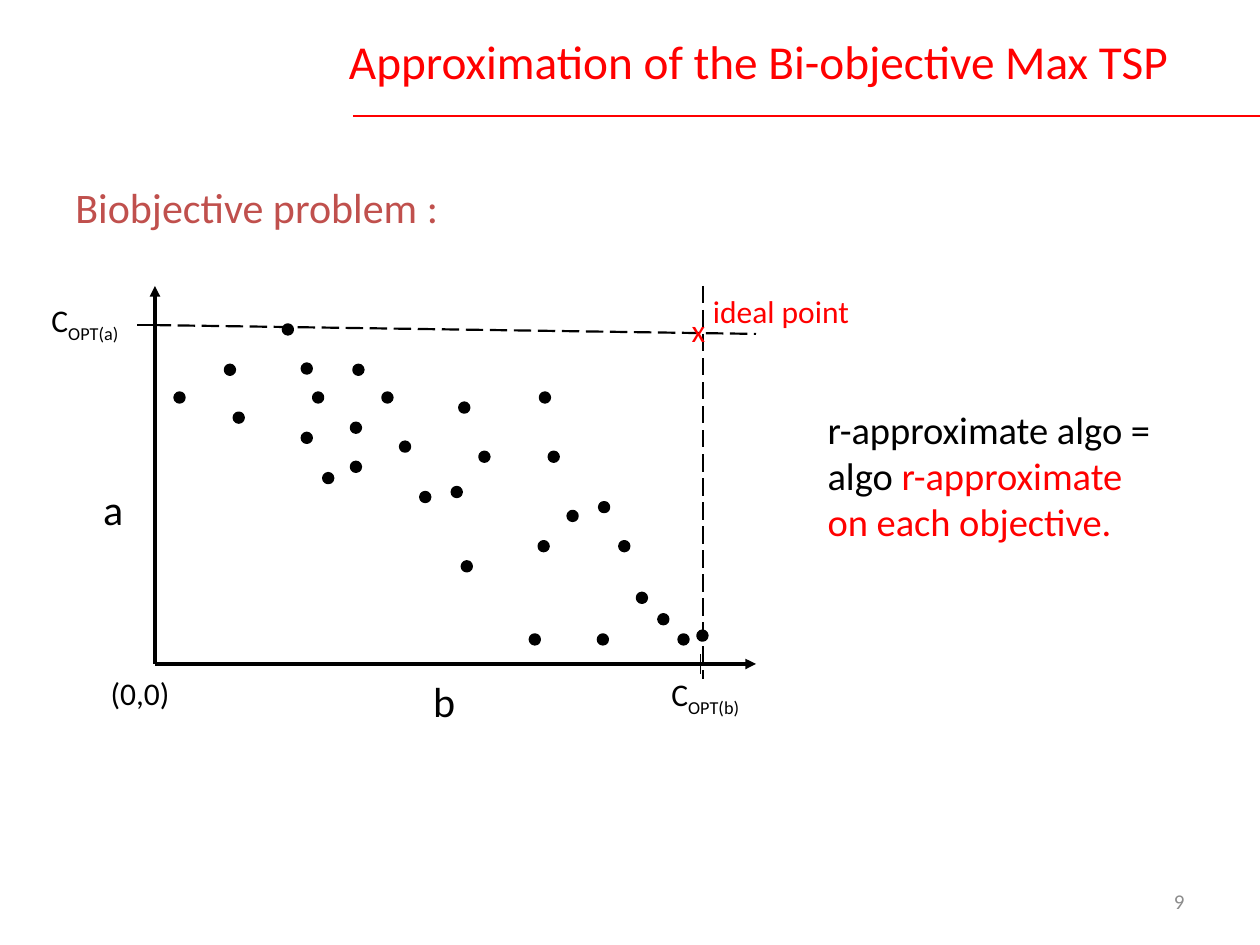
from lxml.etree import SubElement
from pptx import Presentation
from pptx.dml.color import RGBColor
from pptx.enum.dml import MSO_LINE
from pptx.enum.shapes import MSO_CONNECTOR, MSO_SHAPE
from pptx.enum.text import MSO_ANCHOR, MSO_AUTO_SIZE, PP_ALIGN
from pptx.oxml.ns import qn
from pptx.util import Inches, Pt

COLORS = {"black": "000000", "red": "FF0000", "heading": "C0504D", "gray": "8C8C8C"}
FONT = "Calibri"
DOT_SIZE = 0.07
ORIGIN_X, ORIGIN_Y = 1.23, 5.27
AXIS_TOP, AXIS_RIGHT = 2.27, 6

# Left and top of each solution in the objective space
SOLUTIONS = [
    (5.06, 4.71), (4.51, 4.06), (3.59, 3.87), (4.75, 5.04), (4.28, 4.3),
    (5.54, 5.01), (4.36, 3.59), (4.21, 5.04), (4.29, 3.12), (4.92, 4.3),
    (1.79, 2.9), (3.34, 3.91), (3.18, 3.51), (3.81, 3.59), (3.65, 3.2),
    (2.49, 3.12), (2.79, 3.67), (1.86, 3.28), (2.4, 3.44), (2.4, 2.89),
    (5.23, 4.88), (1.39, 3.12), (2.79, 3.36), (5.39, 5.04), (2.57, 3.76),
    (3.04, 3.12), (4.76, 3.99), (2.25, 2.58), (2.81, 2.9), (3.67, 4.46),
]


def color(name):
    return RGBColor.from_string(COLORS[name])


class SlidePainter:
    """Holds the style and the current slide."""

    def __init__(self, page):
        self.page = page

    def text(self, left, top, width, height, paragraphs, size, tint="black",
             align=PP_ALIGN.LEFT, anchor=MSO_ANCHOR.TOP, wrap=True, grow=False):
        """Each paragraph is a list of (text, color or None, is subscript)."""
        box = self.page.shapes.add_textbox(
            Inches(left), Inches(top), Inches(width), Inches(height))
        frame = box.text_frame
        frame.word_wrap = wrap
        frame.vertical_anchor = anchor
        frame.auto_size = MSO_AUTO_SIZE.SHAPE_TO_FIT_TEXT if grow else MSO_AUTO_SIZE.NONE
        for index, spans in enumerate(paragraphs):
            para = frame.add_paragraph() if index else frame.paragraphs[0]
            para.alignment = align
            para.font.name = FONT
            para.font.size = Pt(size)
            para.font.color.rgb = color(tint)
            for words, span_tint, subscript in spans:
                span = para.add_run()
                span.text = words
                span.font.name = FONT
                span.font.size = Pt(size)
                span.font.color.rgb = color(span_tint or tint)
                if subscript:
                    span.font._element.set("baseline", "-25000")
        return box

    def label(self, left, top, width, height, words, size=18, tint="black",
              subscript="", wrap=False):
        spans = [(words, None, False)]
        if subscript:
            spans.append((subscript, None, True))
        return self.text(left, top, width, height, [spans], size, tint,
                         wrap=wrap, grow=True)

    def line(self, start, end, width, tint="black", dashed=False, arrow=False):
        """The arrowhead, if any, sits at the start."""
        connector = self.page.shapes.add_connector(
            MSO_CONNECTOR.STRAIGHT, *(Inches(value) for value in start + end))
        connector.line.color.rgb = color(tint)
        connector.line.width = Pt(width)
        if dashed:
            connector.line.dash_style = MSO_LINE.LONG_DASH
        if arrow:
            SubElement(connector.line._get_or_add_ln(), qn("a:headEnd"), type="triangle")
        SubElement(connector._element.spPr, qn("a:effectLst"))
        return connector

    def dot(self, left, top):
        shape = self.page.shapes.add_shape(
            MSO_SHAPE.FLOWCHART_CONNECTOR, Inches(left), Inches(top),
            Inches(DOT_SIZE), Inches(DOT_SIZE))
        shape.shadow.inherit = False
        shape.fill.solid()
        shape.fill.fore_color.rgb = color("black")
        shape.line.color.rgb = color("black")
        shape.line.width = Pt(2)
        return shape


def main():
    deck = Presentation()
    deck.slide_width, deck.slide_height = Inches(10), Inches(7.5)
    painter = SlidePainter(deck.slides.add_slide(deck.slide_layouts[6]))

    # Heading and page number
    painter.text(0.5, 1.39, 4.33, 5.31, [[("Biobjective problem :", None, False)]],
                 24, "heading")
    painter.text(7.17, 6.95, 2.33, 0.4, [[("9", None, False)]], 12, "gray",
                 PP_ALIGN.RIGHT, MSO_ANCHOR.MIDDLE)

    # Axes and solutions
    origin = (ORIGIN_X, ORIGIN_Y)
    painter.line((AXIS_RIGHT, ORIGIN_Y), origin, 2, arrow=True)
    painter.line((ORIGIN_X, AXIS_TOP), origin, 2, arrow=True)
    for left, top in SOLUTIONS:
        painter.dot(left, top)

    # Definition
    painter.text(6.47, 3.17, 2.87, 1.51, [
        [("r-approximate algo =", None, False)],
        [("algo ", None, False), ("r-approximate", "red", False)],
        [("on each objective.", "red", False)],
    ], 22, wrap=False, grow=True)

    # Axis names, ticks and optimum values
    painter.label(0.72, 3.79, 0.37, 0.5, "a", 24)
    painter.label(3.34, 5.31, 0.4, 0.5, "b", 24)
    painter.line((5.56, 5.19), (5.56, 5.35), 0.75)
    painter.label(5.23, 5.31, 0.91, 0.4, "C", subscript="OPT(b)")
    painter.label(0.31, 2.34, 0.9, 0.4, "C", subscript="OPT(a)")
    painter.line((1.09, 2.58), (1.31, 2.58), 0.75)

    # Ideal point where the dashed lines cross
    painter.line((5.58, AXIS_TOP), (5.58, 5.39), 1.25, dashed=True)
    painter.line((1.22, 2.58), (AXIS_RIGHT, 2.65), 1.25, dashed=True)
    painter.label(5.39, 2.42, 0.35, 0.4, "x", tint="red")
    painter.label(5.56, 2.27, 1.42, 0.4, "ideal point", tint="red")
    painter.label(0.78, 5.3, 0.82, 0.4, "(0,0)", wrap=True)

    # Title and its rule
    painter.line((2.8, 0.92), (10, 0.92), 1.25, "red")
    painter.text(2.54, -0.03, 6.96, 1.02,
                 [[("Approximation of the Bi-objective Max TSP", None, False)]],
                 27, "red", PP_ALIGN.CENTER, MSO_ANCHOR.MIDDLE)

    deck.save("out.pptx")


if __name__ == "__main__":
    main()
